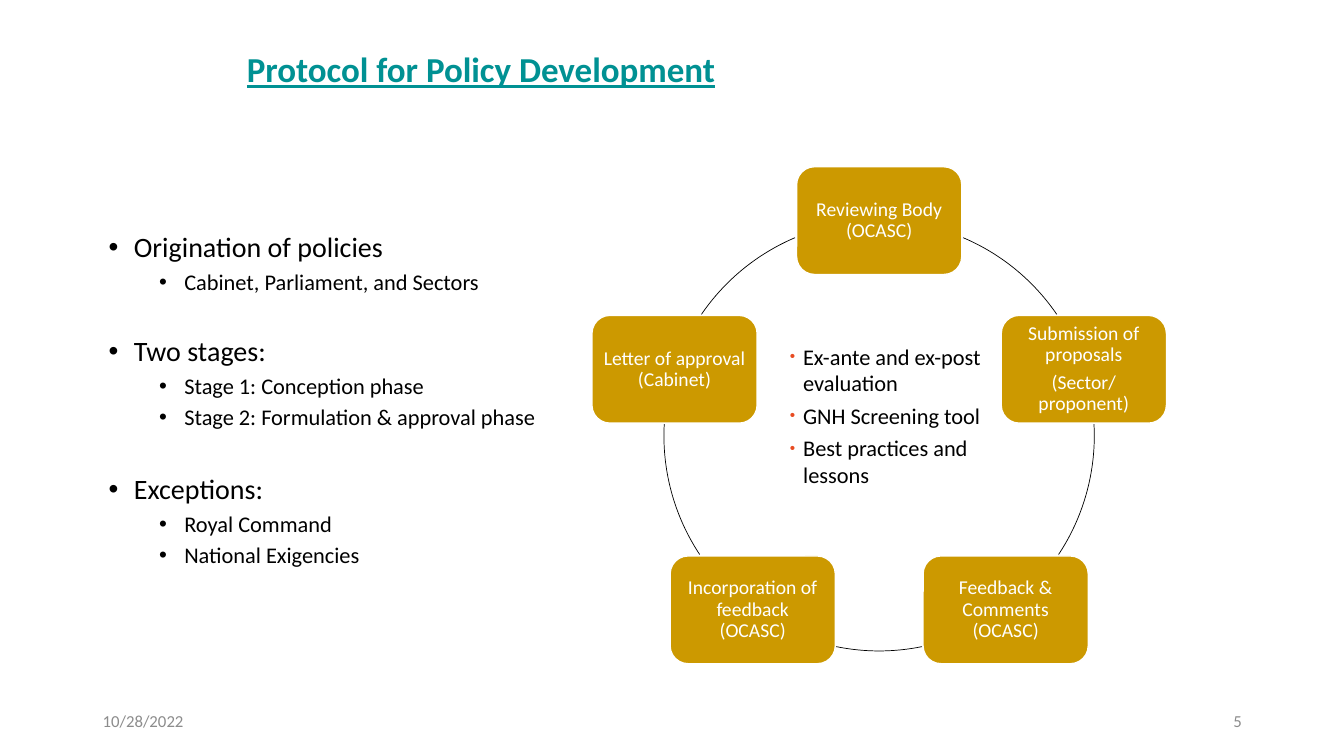
"""Build the policy development protocol slide with its review cycle."""
import math
from dataclasses import dataclass

from lxml import etree
from pptx import Presentation
from pptx.dml.color import RGBColor
from pptx.enum import shapes, text
from pptx.oxml import ns
from pptx.util import Pt

TITLE = "Protocol for Policy Development"
DATE = "10/28/2022"
PAGE = "5"
TOPICS = [
    ("Origination of policies", ["Cabinet, Parliament, and Sectors"], 0),
    ("Two stages:", ["Stage 1: Conception phase",
                     "Stage 2: Formulation & approval phase"], 30.4),
    ("Exceptions:", ["Royal Command", "National Exigencies"], 32.6),
]
STEPS = [
    ["Reviewing Body (OCASC)"],
    ["Submission of proposals", "(Sector/ proponent)"],
    ["Feedback & Comments (OCASC)"],
    ["Incorporation of feedback (OCASC)"],
    ["Letter of approval (Cabinet)"],
]
ARCS = [(293, 325.7), (356.9, 33.5), (78.5, 101.5), (146.5, 183.1), (214.3, 247)]
TOOLS = ["Ex-ante and ex-post evaluation", "GNH Screening tool",
         "Best practices and lessons"]


@dataclass(frozen=True)
class Theme:
    """Colours, font and type sizes of the slide."""
    font: str = "Calibri"
    heading: str = "009193"
    body: str = "000000"
    step: str = "CC9900"
    light: str = "FFFFFF"
    accent: str = "E84C22"
    muted: str = "8C8C8C"
    title_size: float = 25
    topic_size: float = 20
    detail_size: float = 16
    step_size: float = 14
    footer_size: float = 12


THEME = Theme()
CENTRE_X, CENTRE_Y, RADIUS = 628, 311.3, 153.7
STEP_WIDTH, STEP_HEIGHT = 118, 77
MIDDLE = text.MSO_ANCHOR.MIDDLE


def apply(target, formats):
    for name, value in formats.items():
        setattr(target, name, value)


def add_bullet(paragraph, left, hanging, colour=None, percent=None):
    properties = paragraph._p.get_or_add_pPr()
    properties.set("marL", str(Pt(left)))
    properties.set("indent", str(-Pt(hanging)))
    if colour:
        holder = etree.SubElement(properties, ns.qn("a:buClr"))
        etree.SubElement(holder, ns.qn("a:srgbClr"), val=colour)
    if percent:
        etree.SubElement(properties, ns.qn("a:buSzPct"), val=str(percent * 1000))
    etree.SubElement(properties, ns.qn("a:buFont"), typeface="Arial")
    etree.SubElement(properties, ns.qn("a:buChar"), char="•")


def write(frame, lines, colour, anchor=text.MSO_ANCHOR.TOP):
    """Fill a frame from (wording, size, paragraph formats, bullet, font formats)."""
    apply(frame, {"word_wrap": True, "vertical_anchor": anchor})
    for index, (wording, size, formats, bullet, font) in enumerate(lines):
        paragraph = frame.add_paragraph() if index else frame.paragraphs[0]
        apply(paragraph, formats)
        if bullet:
            add_bullet(paragraph, **bullet)
        run = paragraph.add_run()
        run.text = wording
        apply(run.font, {"name": THEME.font, "size": Pt(size), **font})
        run.font.color.rgb = RGBColor.from_string(colour)


def add_text(slide, bounds, *content):
    box = slide.shapes.add_textbox(*map(Pt, bounds))
    write(box.text_frame, *content)


def add_topics(slide):
    lines = []
    for topic, details, gap in TOPICS:
        lines.append((topic, THEME.topic_size,
                      {"line_spacing": 0.9, "space_before": Pt(gap)},
                      {"left": 18, "hanging": 18}, {}))
        lines += [(detail, THEME.detail_size,
                   {"level": 1, "line_spacing": 0.9, "space_before": Pt(5)},
                   {"left": 54, "hanging": 18}, {}) for detail in details]
    add_text(slide, (70.6, 163.4, 828, 342.7), lines, THEME.body)


def add_cycle(slide):
    for start, end in ARCS:
        arc = slide.shapes.add_shape(
            shapes.MSO_SHAPE.ARC, Pt(CENTRE_X - RADIUS), Pt(CENTRE_Y - RADIUS),
            Pt(2 * RADIUS), Pt(2 * RADIUS))
        arc.shadow.inherit = False
        arc.fill.background()
        arc.line.width = Pt(0.5)
        arc.line.color.rgb = RGBColor.from_string(THEME.body)
        for index, angle in enumerate((start, end)):
            arc.adjustments[index] = angle * 0.6

    for index, wordings in enumerate(STEPS):
        angle = math.radians(360 / len(STEPS) * index - 90)
        left = CENTRE_X + RADIUS * math.cos(angle) - STEP_WIDTH / 2
        top = CENTRE_Y + RADIUS * math.sin(angle) - STEP_HEIGHT / 2
        step = slide.shapes.add_shape(
            shapes.MSO_SHAPE.ROUNDED_RECTANGLE,
            Pt(left), Pt(top), Pt(STEP_WIDTH), Pt(STEP_HEIGHT))
        step.shadow.inherit = False
        step.fill.solid()
        step.fill.fore_color.rgb = RGBColor.from_string(THEME.step)
        step.line.width = Pt(1)
        step.line.color.rgb = RGBColor.from_string(THEME.light)
        frame = step.text_frame
        apply(frame, {f"margin_{side}": Pt(4.3)
                      for side in ("left", "top", "right", "bottom")})
        lines = [(wording, THEME.step_size,
                  {"alignment": text.PP_ALIGN.CENTER, "line_spacing": 0.9,
                   "space_before": Pt(5 if row else 0)}, None, {})
                 for row, wording in enumerate(wordings)]
        write(frame, lines, THEME.light, MIDDLE)


def add_tools(slide):
    bullet = {"left": 18, "hanging": 9.4, "colour": THEME.accent, "percent": 68}
    lines = [(tool, THEME.detail_size, {"space_before": Pt(4 if row else 0)},
              bullet, {}) for row, tool in enumerate(TOOLS)]
    add_text(slide, (548.6, 241.2, 167, 118.8), lines, THEME.body)


def main():
    presentation = Presentation()
    apply(presentation, {"slide_width": Pt(960), "slide_height": Pt(540)})
    slide = presentation.slides.add_slide(presentation.slide_layouts[6])
    add_text(slide, (169.2, 17.3, 497.5, 64),
             [(TITLE, THEME.title_size, {}, None, {"bold": True, "underline": True})],
             THEME.heading, MIDDLE)
    add_topics(slide)
    add_cycle(slide)
    add_tools(slide)
    for left, wording, alignment in ((66.2, DATE, text.PP_ALIGN.LEFT),
                                     (678.2, PAGE, text.PP_ALIGN.RIGHT)):
        add_text(slide, (left, 500.4, 216, 28.8),
                 [(wording, THEME.footer_size, {"alignment": alignment}, None, {})],
                 THEME.muted, MIDDLE)
    presentation.save("out.pptx")


if __name__ == "__main__":
    main()
